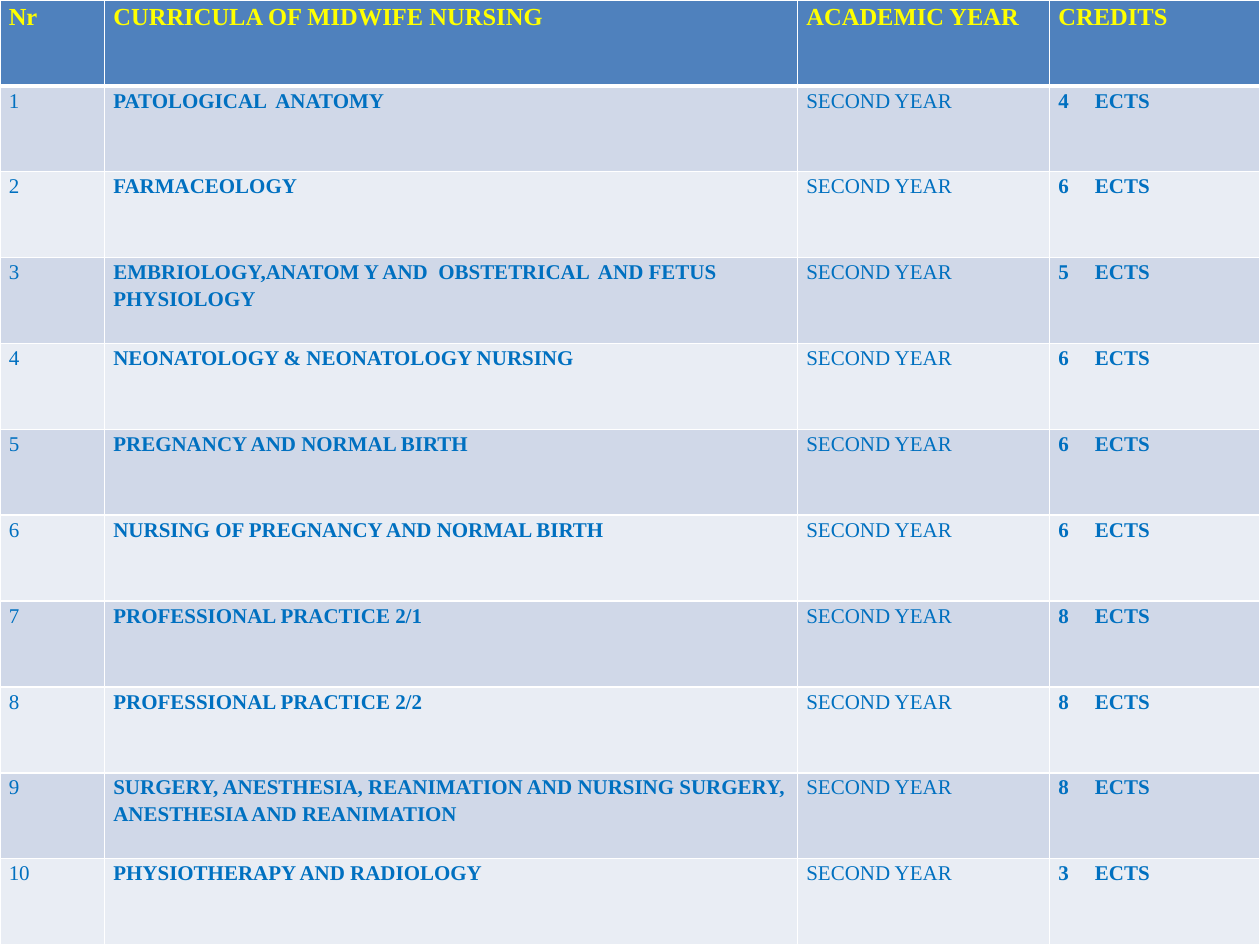
from lxml.etree import SubElement
from pptx import Presentation
from pptx.dml.color import RGBColor
from pptx.oxml.ns import qn
from pptx.util import Inches, Pt

COLORS = {
    "header": "4F81BD",
    "odd": "D0D8E8",
    "even": "E9EDF4",
    "heading": "FFFF00",
    "text": "0070C0",
    "border": "FFFFFF",
}
FONT = "Times New Roman"
COLUMN_WIDTHS = [0.83, 5.5, 2, 1.67]
BOLD_COLUMNS = (1, 3)
HEADINGS = ["Nr", "CURRICULA OF MIDWIFE NURSING", "ACADEMIC YEAR", "CREDITS"]
YEAR = "SECOND YEAR"
COURSES = [
    ("PATOLOGICAL  ANATOMY", 4),
    ("FARMACEOLOGY", 6),
    ("EMBRIOLOGY,ANATOM Y AND  OBSTETRICAL  AND FETUS PHYSIOLOGY", 5),
    ("NEONATOLOGY & NEONATOLOGY NURSING", 6),
    ("PREGNANCY AND NORMAL BIRTH", 6),
    ("NURSING OF PREGNANCY AND NORMAL BIRTH", 6),
    ("PROFESSIONAL PRACTICE 2/1", 8),
    ("PROFESSIONAL PRACTICE 2/2", 8),
    ("SURGERY, ANESTHESIA, REANIMATION AND NURSING SURGERY, "
     "ANESTHESIA AND REANIMATION", 8),
    ("PHYSIOTHERAPY AND RADIOLOGY", 3),
]


def set_borders(cell, top, bottom):
    properties = cell._tc.get_or_add_tcPr()
    for side, width in (("L", 1), ("R", 1), ("T", top), ("B", bottom)):
        line = SubElement(properties, qn(f"a:ln{side}"), w=str(Pt(width)))
        fill = SubElement(line, qn("a:solidFill"))
        SubElement(fill, qn("a:srgbClr"), val=COLORS["border"])


def add_tab_stop(para, position):
    tabs = SubElement(para._p.get_or_add_pPr(), qn("a:tabLst"))
    SubElement(tabs, qn("a:tab"), pos=str(position), algn="l")


def fill_cell(cell, text, row, column):
    is_header = row == 0
    set_borders(cell, 3 if row == 1 else 1, 3 if is_header else 1)
    cell.margin_left = cell.margin_right = Inches(0.07)
    cell.margin_top = cell.margin_bottom = 0
    band = "header" if is_header else "odd" if row % 2 else "even"
    cell.fill.solid()
    cell.fill.fore_color.rgb = RGBColor.from_string(COLORS[band])

    cell.text = text
    para = cell.text_frame.paragraphs[0]
    para.line_spacing = 1.15
    if "\t" in text:
        add_tab_stop(para, Inches(0.29))
    font = para.font
    font.name = FONT
    font.size = Pt(14 if is_header else 12)
    font.bold = is_header or column in BOLD_COLUMNS
    color = COLORS["heading" if is_header else "text"]
    font.color.rgb = RGBColor.from_string(color)


def add_curriculum(page, left, top, width, height):
    rows = [HEADINGS] + [
        (str(number), course, YEAR, f"{credits}\tECTS")
        for number, (course, credits) in enumerate(COURSES, 1)
    ]
    table = page.shapes.add_table(
        len(rows), len(HEADINGS), left, top, width, height).table
    for column, share in zip(table.columns, COLUMN_WIDTHS):
        column.width = int(width * share / sum(COLUMN_WIDTHS))
    for row, texts in enumerate(rows):
        for column, text in enumerate(texts):
            fill_cell(table.cell(row, column), text, row, column)


def main():
    deck = Presentation()
    deck.slide_width, deck.slide_height = Inches(10), Inches(7.5)
    page = deck.slides.add_slide(deck.slide_layouts[6])
    # The curriculum table covers the whole page
    add_curriculum(page, 0, 0, deck.slide_width, deck.slide_height)
    deck.save("out.pptx")


if __name__ == "__main__":
    main()
